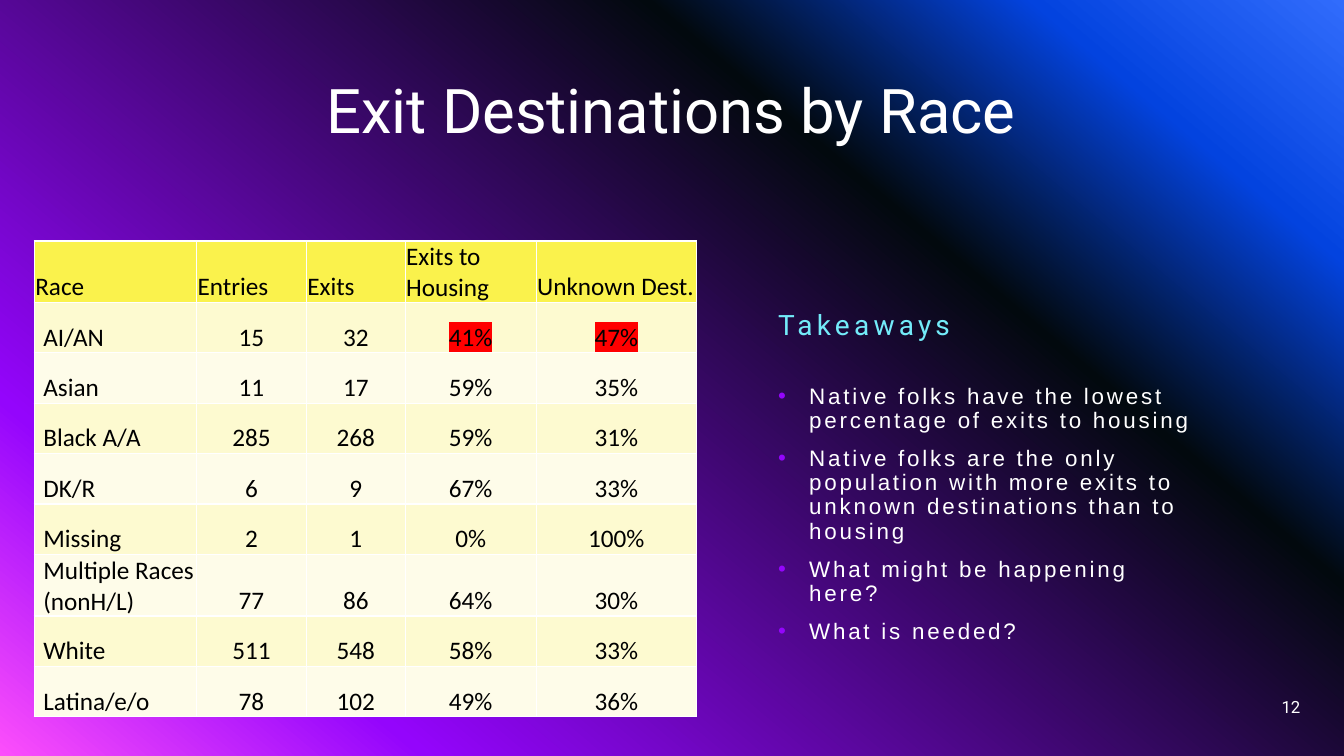
from lxml.etree import SubElement, fromstring
from pptx import Presentation
from pptx.dml.color import RGBColor
from pptx.enum.text import MSO_ANCHOR, PP_ALIGN
from pptx.oxml.ns import qn
from pptx.util import Inches, Pt

WIDE, HIGH = Inches(13.333), Inches(7.5)
WHITE, BLACK, CYAN, VIOLET, RED = "FFFFFF", "000000", "73EBF9", "9405FC", "FF0000"
HEAD, BANDS = "FAF24C", ("FEFCE9", "FDFAD0")
STOPS = [(0, "316CFC"), (14, "0343DF"), (31, "02090E"), (81, "9405FC"), (100, "FC4EFB")]
ANGLE = 130
LEFT, CENTER, RIGHT = PP_ALIGN.LEFT, PP_ALIGN.CENTER, PP_ALIGN.RIGHT

TITLE = "Exit Destinations by Race"
LABEL = "Takeaways"
POINTS = [
    "Native folks have the lowest percentage of exits to housing",
    "Native folks are the only population with more exits to unknown destinations than to housing",
    "What might be happening here?",
    "What is needed?",
]
NUMBER = "12"
ROWS = [
    ("Race", "Entries", "Exits", "Exits to Housing", "Unknown Dest."),
    ("AI/AN", "15", "32", "41%", "47%"),
    ("Asian", "11", "17", "59%", "35%"),
    ("Black A/A", "285", "268", "59%", "31%"),
    ("DK/R", "6", "9", "67%", "33%"),
    ("Missing", "2", "1", "0%", "100%"),
    ("Multiple Races (nonH/L)", "77", "86", "64%", "30%"),
    ("White", "511", "548", "58%", "33%"),
    ("Latina/e/o", "78", "102", "49%", "36%"),
]
MARKED = {(1, 3), (1, 4)}

COLS = (12.08, 8.17, 7.35, 9.75, 11.93)
ROW = 6.67
GRID = (2.55, 31.87, sum(COLS), ROW * len(ROWS))
TOP = (6.83, 5.33, 86.25, 19.33)
SIDE = (57.15, 39.33, 32.1, 7.6)
LIST = (57.15, 50.27, 32.1, 42.27)
FOOT = (75, 90.8, 22.5, 5.33)


def color(code):
    return RGBColor.from_string(code)


def place(box):
    return [int(part * full / 100) for part, full in zip(box, (WIDE, HIGH) * 2)]


def write(frame, *lines, size=18, font="Calibri", ink=WHITE, align=LEFT, anchor=MSO_ANCHOR.MIDDLE,
          lead=None, gap=0, track=0, mark=None, dot=None):
    frame.word_wrap = True
    frame.vertical_anchor = anchor
    for place_no, line in enumerate(lines):
        para = frame.add_paragraph() if place_no else frame.paragraphs[0]
        para.alignment = align
        if lead:
            para.line_spacing = lead
        if place_no:
            para.space_before = Pt(gap)
        if dot:
            props = para._p.get_or_add_pPr()
            props.set("marL", str(Inches(0.31)))
            props.set("indent", str(-Inches(0.31)))
            tint = SubElement(props, qn("a:buClr"))
            SubElement(tint, qn("a:srgbClr"), val=dot)
            SubElement(props, qn("a:buFont"), typeface="Arial")
            SubElement(props, qn("a:buChar"), char="•")
        run = para.add_run()
        run.text = line
        run.font.size = Pt(size)
        run.font.bold = False
        run.font.color.rgb = color(ink)
        style = run._r.get_or_add_rPr()
        if track:
            style.set("spc", str(track * 100))
        if mark:
            glow = SubElement(style, qn("a:highlight"))
            SubElement(glow, qn("a:srgbClr"), val=mark)
        run.font.name = font


def paint(slide):
    fill = slide.background.fill
    fill.gradient()
    fill.gradient_angle = 0
    grad = slide._element.cSld.find(".//" + qn("a:gradFill"))
    stops = grad.find(qn("a:gsLst"))
    for stop in list(stops):
        stops.remove(stop)
    for share, code in STOPS:
        stop = SubElement(stops, qn("a:gs"), pos=str(share * 1000))
        SubElement(stop, qn("a:srgbClr"), val=code)
    line = grad.find(qn("a:lin"))
    line.set("ang", str(ANGLE * 60000))
    line.set("scaled", "0")


def note(slide, box, *lines, **form):
    write(slide.shapes.add_textbox(*place(box)).text_frame, *lines, **form)


def tabulate(slide):
    table = slide.shapes.add_table(len(ROWS), len(COLS), *place(GRID)).table
    for col, share in zip(table.columns, COLS):
        col.width = int(WIDE * share / 100)
    for r, row in enumerate(ROWS):
        table.rows[r].height = int(HIGH * ROW / 100)
        for c, word in enumerate(row):
            cell = table.cell(r, c)
            cell.fill.solid()
            cell.fill.fore_color.rgb = color(BANDS[r % 2] if r else HEAD)
            cell.margin_left = Inches(0.09 if r and not c else 0.01)
            cell.margin_top = cell.margin_right = Inches(0.01)
            cell.margin_bottom = 0
            cell.vertical_anchor = MSO_ANCHOR.BOTTOM
            write(cell.text_frame, word, ink=BLACK, anchor=None,
                  align=CENTER if r and c else LEFT,
                  mark=RED if (r, c) in MARKED else None)
            cell.vertical_anchor = MSO_ANCHOR.BOTTOM


def main():
    deck = Presentation()
    deck.slide_width, deck.slide_height = WIDE, HIGH
    slide = deck.slides.add_slide(deck.slide_layouts[6])
    paint(slide)
    note(slide, TOP, TITLE, size=44, font="Roboto", align=CENTER, lead=0.9)
    note(slide, SIDE, LABEL, size=20, font="Roboto", ink=CYAN, lead=0.9, track=3)
    tabulate(slide)
    note(slide, LIST, *POINTS, size=16, font="Arial", anchor=MSO_ANCHOR.TOP,
         lead=0.9, gap=10, track=2, dot=VIOLET)
    note(slide, FOOT, NUMBER, size=12, font="Roboto", align=RIGHT)
    deck.save("out.pptx")


if __name__ == "__main__":
    main()
